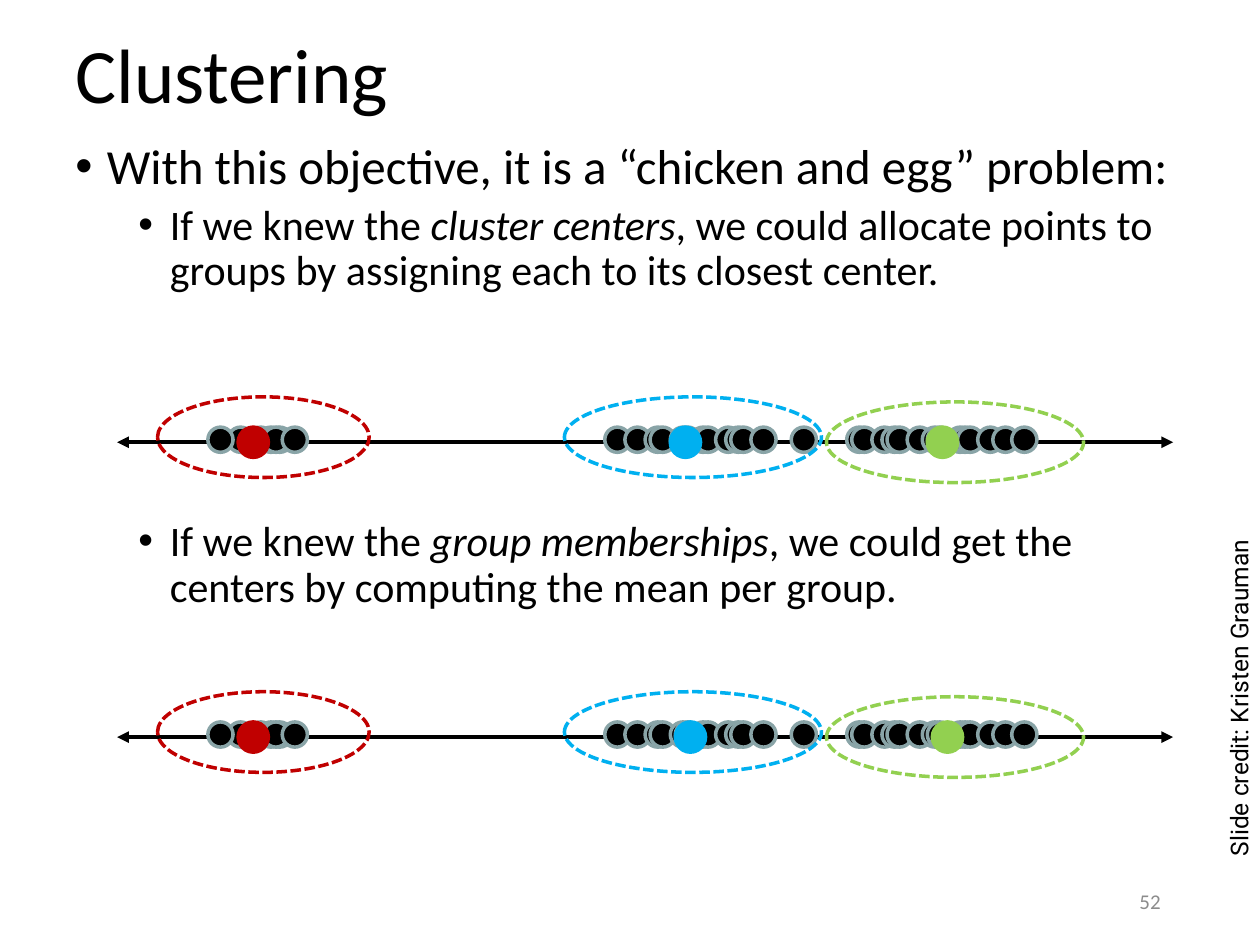
from lxml import etree
from pptx import Presentation
from pptx import util as u
from pptx.dml.color import RGBColor
from pptx.enum import dml, shapes, text
from pptx.oxml import ns

COLORS = {
    "black": "000000",
    "rim": "89A4A7",
    "red": "C00000",
    "blue": "00B0F0",
    "green": "92D050",
    "gray": "8C8C8C",
}
POINTS = [
    1.81, 1.97, 1.65, 2.12, 4.8, 4.96, 5.12, 5.16, 5.32, 5.36, 2.05, 2.09,
    2.24, 6.72, 6.76, 6.92, 7, 7.04, 7.2, 5.48, 5.52, 5.68, 5.76, 5.8, 5.96,
    6.28, 7.32, 7.36, 7.52, 7.56, 7.6, 7.76, 7.88, 8.03,
]
CLUSTERS = [
    ("red", 1.25, 1.68, -0.24),
    ("blue", 4.48, 2.04, -0.24),
    ("green", 6.56, 2.04, -0.2),
]
ROWS = [(3.39, (1.89, 5.32, 7.36)), (5.73, (1.89, 5.36, 7.4))]
BULLETS = [
    (0, 28, 0, ["With this objective, it is a “chicken and egg” problem:"]),
    (1, 24, 5, ["If we knew the ", "cluster centers",
                ", we could allocate points to groups by assigning each to its closest center."]),
    (1, 24, 129, ["If we knew the ", "group memberships",
                  ", we could get the centers by computing the mean per group."]),
]


def write(para, words, size=24, font="Calibri", color="black", italic=False):
    span = para.add_run()
    span.text = words
    span.font.size = u.Pt(size)
    span.font.name = font
    span.font.italic = italic
    span.font.color.rgb = RGBColor.from_string(COLORS[color])


def add_ellipse(parent, left, top, width, height, line, fill=None):
    oval = parent.shapes.add_shape(
        shapes.MSO_SHAPE.OVAL,
        u.Inches(left), u.Inches(top), u.Inches(width), u.Inches(height))
    oval.shadow.inherit = False
    oval.line.color.rgb = RGBColor.from_string(COLORS[line])
    oval.line.width = u.Pt(2)
    if fill:
        oval.fill.solid()
        oval.fill.fore_color.rgb = RGBColor.from_string(COLORS[fill])
    else:
        oval.fill.background()
        oval.line.dash_style = dml.MSO_LINE.SQUARE_DOT


deck = Presentation()
deck.slide_width, deck.slide_height = u.Inches(10), u.Inches(7.5)
page = deck.slides.add_slide(deck.slide_layouts[6])

title = page.shapes.add_textbox(u.Inches(0.5), u.Inches(0), u.Inches(9), u.Inches(1.25))
title.text_frame.word_wrap = True
title.text_frame.vertical_anchor = text.MSO_ANCHOR.MIDDLE
para = title.text_frame.paragraphs[0]
para.line_spacing = 0.9
write(para, "Clustering", size=44)

body = page.shapes.add_textbox(u.Inches(0.5), u.Inches(1.08), u.Inches(9), u.Inches(4.95))
body.text_frame.word_wrap = True
for number, (level, size, gap, spans) in enumerate(BULLETS):
    para = body.text_frame.add_paragraph() if number else body.text_frame.paragraphs[0]
    para.level = level
    para.line_spacing = 0.9
    if gap:
        para.space_before = u.Pt(gap)
    props = para._p.get_or_add_pPr()
    props.set("marL", str(u.Inches(0.25 + 0.5 * level)))
    props.set("indent", str(u.Inches(-0.25)))
    etree.SubElement(props, ns.qn("a:buFont")).set("typeface", "Arial")
    etree.SubElement(props, ns.qn("a:buChar")).set("char", "•")
    for position, words in enumerate(spans):
        write(para, words, size=size, italic=position == 1)

for top, centers in ROWS:
    group = page.shapes.add_group_shape()
    axis_y = u.Inches(top + 0.12)
    axis = group.shapes.add_connector(
        shapes.MSO_CONNECTOR.STRAIGHT, u.Inches(0.93), axis_y, u.Inches(9.31), axis_y)
    axis.line.color.rgb = RGBColor.from_string(COLORS["black"])
    axis.line.width = u.Pt(2.25)
    for end in ("a:headEnd", "a:tailEnd"):
        etree.SubElement(axis.line._get_or_add_ln(), ns.qn(end)).set("type", "triangle")
    etree.SubElement(axis._element.spPr, ns.qn("a:effectLst"))
    for left in POINTS:
        add_ellipse(group, left, top, 0.2, 0.2, "rim", "black")
    for (color, left, width, offset), center in zip(CLUSTERS, centers):
        add_ellipse(page, left, top + offset, width, 0.64, color)
        add_ellipse(page, center, top, 0.24, 0.24, color, color)

credit = page.shapes.add_textbox(u.Inches(8.43), u.Inches(5.32), u.Inches(2.81), u.Inches(0.34))
credit.rotation = 270
credit.text_frame.word_wrap = False
credit.text_frame.auto_size = text.MSO_AUTO_SIZE.SHAPE_TO_FIT_TEXT
write(credit.text_frame.paragraphs[0], "Slide credit: Kristen Grauman", size=14, font="Roboto")

footer = page.shapes.add_textbox(u.Inches(7.06), u.Inches(6.95), u.Inches(2.25), u.Inches(0.4))
footer.text_frame.word_wrap = True
footer.text_frame.vertical_anchor = text.MSO_ANCHOR.MIDDLE
para = footer.text_frame.paragraphs[0]
para.alignment = text.PP_ALIGN.RIGHT
write(para, "52", size=12, color="gray")

deck.save("out.pptx")
